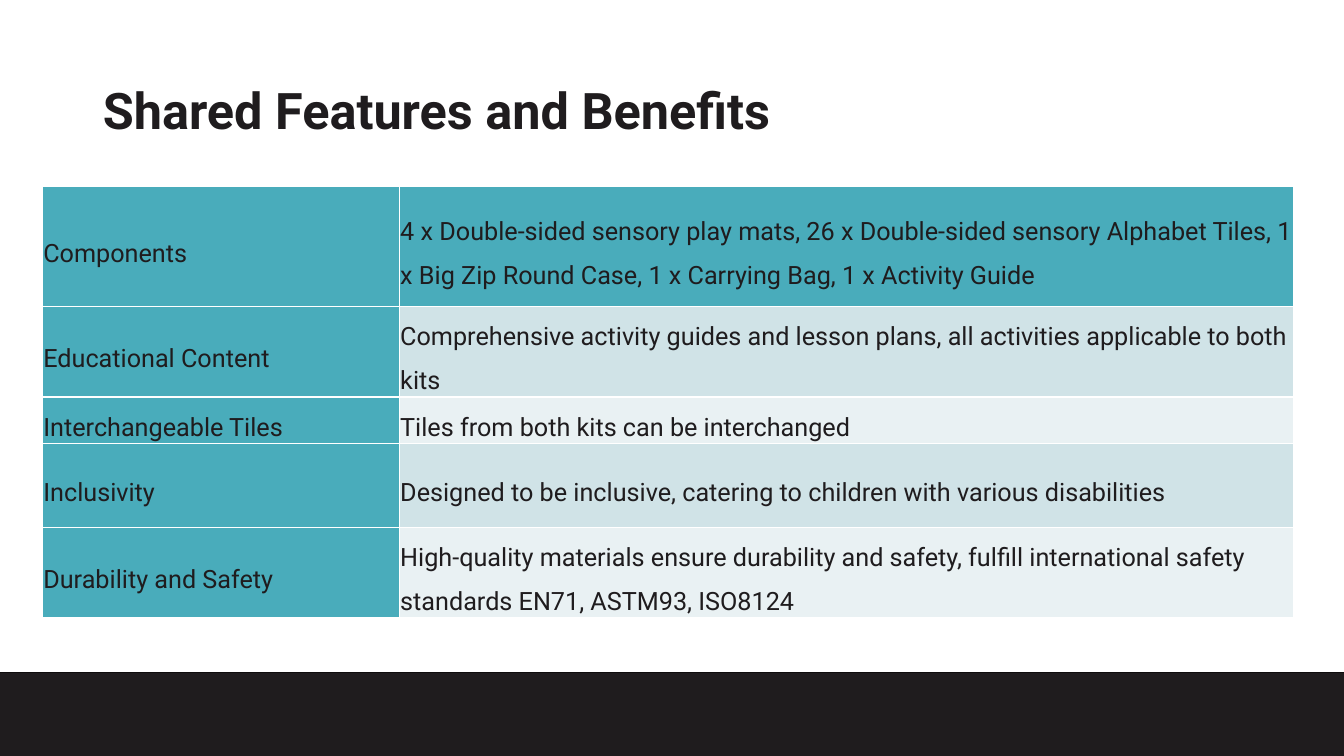
from lxml import etree
from pptx import Presentation
from pptx.dml.color import RGBColor
from pptx.enum import shapes, text
from pptx.oxml.ns import qn
from pptx.util import Inches, Pt

INK = RGBColor(0x1F, 0x1C, 0x1E)
BAND_EDGE = RGBColor(0x0E, 0x0C, 0x0D)
WHITE = RGBColor(0xFF, 0xFF, 0xFF)
TEAL = RGBColor(0x49, 0xAC, 0xBB)
PALE_TEAL = RGBColor(0xD0, 0xE3, 0xE7)
PALEST_TEAL = RGBColor(0xE9, 0xF1, 0xF3)
FONT = "Roboto"

FEATURES = [
    ("Components",
     "4 x Double-sided sensory play mats, 26 x Double-sided sensory Alphabet Tiles, "
     "1 x Big Zip Round Case, 1 x Carrying Bag, 1 x Activity Guide"),
    ("Educational Content",
     "Comprehensive activity guides and lesson plans, all activities applicable to both kits"),
    ("Interchangeable Tiles", "Tiles from both kits can be interchanged"),
    ("Inclusivity",
     "Designed to be inclusive, catering to children with various disabilities"),
    ("Durability and Safety",
     "High-quality materials ensure durability and safety, fulfill international safety "
     "standards EN71, ASTM93, ISO8124"),
]
COLUMN_WIDTHS = [3.54, 8.87]
ROW_HEIGHTS = [1.19, 0.8, 0.43, 0.83, 0.83]


def add_text(frame, wording, size, line_spacing, bold=False):
    paragraph = frame.paragraphs[0]
    paragraph.alignment = text.PP_ALIGN.LEFT
    paragraph.line_spacing = line_spacing
    run = paragraph.add_run()
    run.text = wording
    run.font.name = FONT
    run.font.size = Pt(size)
    run.font.bold = bold
    run.font.color.rgb = INK


def add_footer_band(slide, left, top, width, height):
    band = slide.shapes.add_shape(
        shapes.MSO_SHAPE.RECTANGLE,
        Inches(left), Inches(top), Inches(width), Inches(height))
    band.shadow.inherit = False
    band.fill.solid()
    band.fill.fore_color.rgb = INK
    band.line.color.rgb = BAND_EDGE
    band.line.width = Pt(1)


def fill_title(slide, left, top, width, height):
    title = slide.shapes.title
    title.left, title.top = Inches(left), Inches(top)
    title.width, title.height = Inches(width), Inches(height)
    title.text_frame.vertical_anchor = text.MSO_ANCHOR.MIDDLE
    add_text(title.text_frame, "Shared Features and Benefits", 36, 0.9, bold=True)


def add_cell_borders(cell):
    """Draw a white line on each side; call before the cell gets its fill."""
    properties = cell._tc.get_or_add_tcPr()
    for side in ("a:lnL", "a:lnR", "a:lnT", "a:lnB"):
        line = etree.SubElement(properties, qn(side), w=str(Pt(1)))
        solid = etree.SubElement(line, qn("a:solidFill"))
        etree.SubElement(solid, qn("a:srgbClr"), val=str(WHITE))


def cell_colour(row, column):
    if row == 0 or column == 0:
        return TEAL
    return PALE_TEAL if row % 2 else PALEST_TEAL


def add_feature_table(slide, left, top, width, height):
    table = slide.shapes.add_table(
        len(FEATURES), len(COLUMN_WIDTHS),
        Inches(left), Inches(top), Inches(width), Inches(height)).table
    table.first_row = False
    table.horz_banding = False
    for column, column_width in zip(table.columns, COLUMN_WIDTHS):
        column.width = Inches(column_width)
    for row, row_height in zip(table.rows, ROW_HEIGHTS):
        row.height = Inches(row_height)

    for r, feature in enumerate(FEATURES):
        for c, wording in enumerate(feature):
            cell = table.cell(r, c)
            cell.margin_left = cell.margin_right = Inches(0.01)
            cell.margin_top = cell.margin_bottom = Inches(0.01)
            cell.vertical_anchor = text.MSO_ANCHOR.MIDDLE
            add_cell_borders(cell)
            cell.fill.solid()
            cell.fill.fore_color.rgb = cell_colour(r, c)
            add_text(cell.text_frame, wording, 18, 1.5)


def main():
    deck = Presentation()
    deck.slide_width, deck.slide_height = Inches(13.33), Inches(7.5)
    slide = deck.slides.add_slide(deck.slide_layouts[5])
    slide.background.fill.solid()
    slide.background.fill.fore_color.rgb = WHITE
    add_footer_band(slide, -0.1, 6.67, 13.55, 0.99)
    fill_title(slide, 0.92, 0.4, 11.5, 1.45)
    add_feature_table(slide, 0.42, 1.85, sum(COLUMN_WIDTHS), sum(ROW_HEIGHTS))
    deck.save("out.pptx")


if __name__ == "__main__":
    main()
